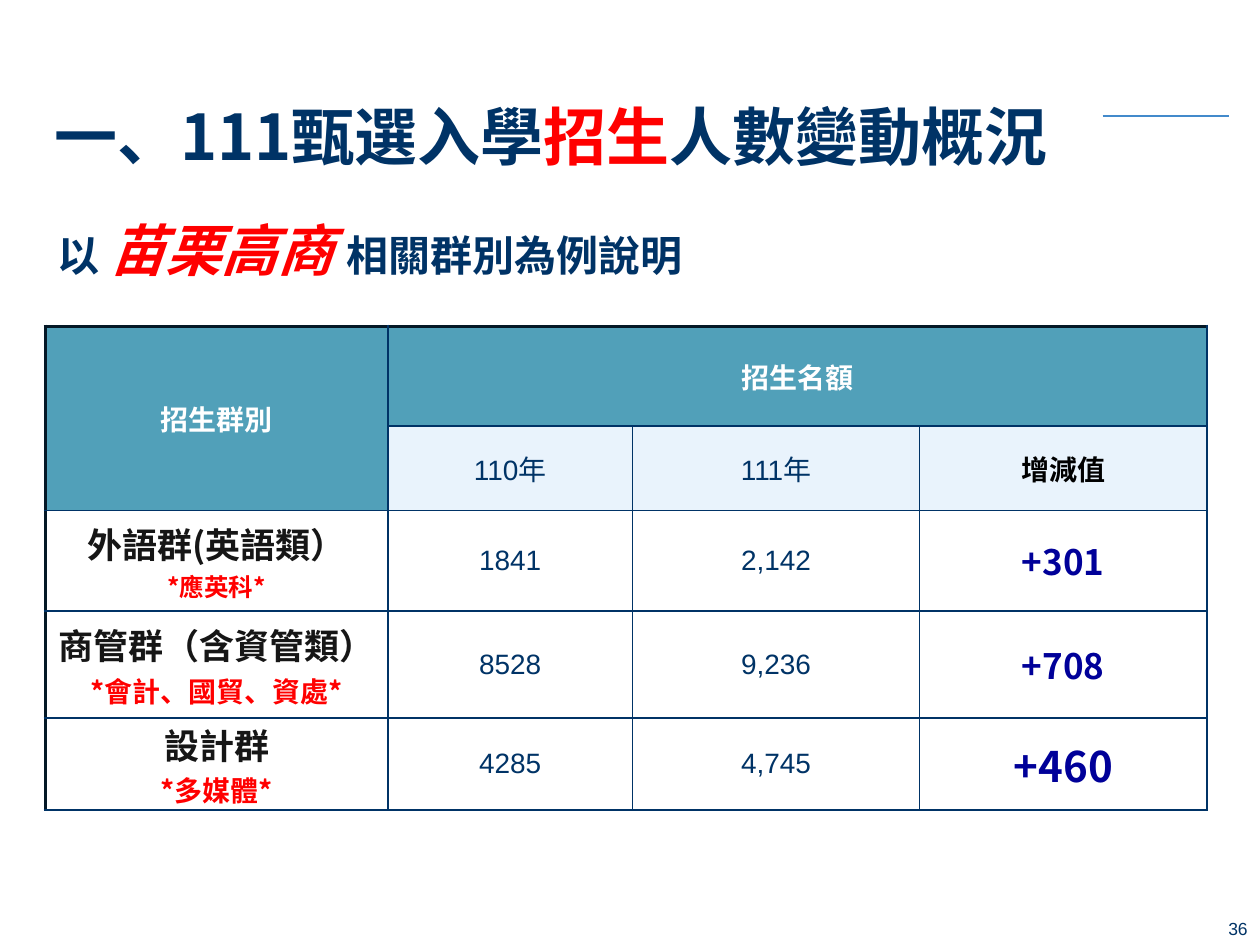
from lxml.etree import SubElement
from pptx import Presentation
from pptx.dml.color import RGBColor
from pptx.enum.shapes import MSO_CONNECTOR
from pptx.enum.text import MSO_ANCHOR, MSO_AUTO_SIZE, PP_ALIGN
from pptx.oxml.ns import qn
from pptx.util import Inches, Pt

SLIDE_WIDTH, SLIDE_HEIGHT = Inches(10), Inches(7.5)
GRID_COLUMNS, GRID_ROWS = 1000, 750
LATIN, CJK = "Arial", "Noto Sans CJK TC"
COLORS = {
    "navy": "003366",
    "red": "FF0000",
    "white": "FFFFFF",
    "black": "000000",
    "ink": "161616",
    "gain": "000099",
    "header": "51A0B9",
    "subheader": "E9F3FC",
    "edge": "041826",
    "rule": "438ACB",
}
COLUMN_SPANS = [272, 194, 228, 228]
ROW_SPANS = [79, 67, 80, 85, 73]
GROUPS = [
    ("外語群(英語類）", "*應英科*", 14, "1841", "2,142", "+301", 20),
    ("商管群（含資管類）", "*會計、國貿、資處*", 16, "8528", "9,236", "+708", 20),
    ("設計群", "*多媒體*", 16, "4285", "4,745", "+460", 24),
]


def across(columns):
    return SLIDE_WIDTH * columns // GRID_COLUMNS


def down(rows):
    return SLIDE_HEIGHT * rows // GRID_ROWS


def area(left, top, width, height):
    return across(left), down(top), across(width), down(height)


def style(font, size, color, face=CJK, bold=True):
    font.size = Pt(size)
    font.bold = bold
    font.color.rgb = RGBColor.from_string(COLORS[color])
    font.name = face
    SubElement(font._rPr, qn("a:ea"), typeface=CJK)


def write_heading(frame, pieces):
    frame.word_wrap = True
    frame.auto_size = MSO_AUTO_SIZE.NONE
    heading = frame.paragraphs[0]
    heading.alignment = PP_ALIGN.LEFT
    properties = heading._p.get_or_add_pPr()
    properties.set("marL", str(across(128)))
    properties.set("indent", str(-across(128)))
    for words, size, color, italic in pieces:
        run = heading.add_run()
        run.text = words
        style(run.font, size, color)
        run.font.italic = italic


def add_title(slide):
    title = slide.shapes.title
    title.left, title.top, title.width, title.height = area(33, 74, 933, 67)
    title.text_frame.vertical_anchor = MSO_ANCHOR.MIDDLE
    write_heading(title.text_frame, [
        ("一、111甄選入學", 36, "navy", False),
        ("招生", 36, "red", False),
        ("人數變動概況", 36, "navy", False),
    ])


def add_subtitle(slide):
    frame = slide.shapes.add_textbox(*area(36, 171, 817, 52)).text_frame
    frame.margin_top = 0
    write_heading(frame, [
        ("以 ", 24, "navy", False),
        ("苗栗高商 ", 32, "red", True),
        ("相關群別為例說明", 24, "navy", False),
    ])


def add_rule(slide):
    rule = slide.shapes.add_connector(
        MSO_CONNECTOR.STRAIGHT, across(875), down(92), across(975), down(92))
    rule.line.color.rgb = RGBColor.from_string(COLORS["rule"])
    rule.line.width = Pt(0.75)
    SubElement(rule._element.spPr, qn("a:effectLst"))


def add_page_number(slide):
    frame = slide.shapes.add_textbox(*area(758, 715, 242, 35)).text_frame
    frame.word_wrap = True
    frame.vertical_anchor = MSO_ANCHOR.BOTTOM
    number = frame.paragraphs[0]
    number.text = "36"
    number.alignment = PP_ALIGN.RIGHT
    style(number.font, 10, "navy", LATIN, False)


def draw_borders(cell, row, column):
    properties = cell._tc.get_or_add_tcPr()
    outer = {"L": column == 0, "T": row == 0}
    for side in "LRTB":
        color, width = ("edge", 2.25) if outer.get(side) else ("navy", 1)
        border = SubElement(properties, qn(f"a:ln{side}"), w=str(Pt(width)))
        fill = SubElement(border, qn("a:solidFill"))
        SubElement(fill, qn("a:srgbClr"), val=COLORS[color])


def format_cell(cell, row, column):
    cell.margin_left = cell.margin_right = cell.margin_top = cell.margin_bottom = 0
    cell.vertical_anchor = MSO_ANCHOR.MIDDLE
    draw_borders(cell, row, column)
    if row > 1:
        cell.fill.background()
        return
    cell.fill.solid()
    shade = "header" if row == 0 or column == 0 else "subheader"
    cell.fill.fore_color.rgb = RGBColor.from_string(COLORS[shade])


def write_cell(cell, *lines):
    frame = cell.text_frame
    for index, (words, *look) in enumerate(lines):
        line = frame.add_paragraph() if index else frame.paragraphs[0]
        line.text = words
        line.alignment = PP_ALIGN.CENTER
        style(line.font, *look)


def add_quota_table(slide):
    table = slide.shapes.add_table(
        len(ROW_SPANS), len(COLUMN_SPANS),
        *area(36, 259, sum(COLUMN_SPANS), sum(ROW_SPANS))).table
    for column, span in zip(table.columns, COLUMN_SPANS):
        column.width = across(span)
    for row, span in zip(table.rows, ROW_SPANS):
        row.height = down(span)
    for row in range(len(ROW_SPANS)):
        for column in range(len(COLUMN_SPANS)):
            format_cell(table.cell(row, column), row, column)
    table.cell(0, 0).merge(table.cell(1, 0))
    table.cell(0, 1).merge(table.cell(0, 3))

    plain = (16, "navy", LATIN, False)
    write_cell(table.cell(0, 0), ("招生群別", 16, "white"))
    write_cell(table.cell(0, 1), ("招生名額", 16, "white"))
    write_cell(table.cell(1, 1), ("110年", *plain))
    write_cell(table.cell(1, 2), ("111年", *plain))
    write_cell(table.cell(1, 3), ("增減值", 16, "black"))
    for row, group in enumerate(GROUPS, start=2):
        name, departments, note_size, before, after, change, change_size = group
        write_cell(table.cell(row, 0),
                   (name, 20, "ink"), (departments, note_size, "red"))
        write_cell(table.cell(row, 1), (before, *plain))
        write_cell(table.cell(row, 2), (after, *plain))
        write_cell(table.cell(row, 3), (change, change_size, "gain"))


def main():
    deck = Presentation()
    deck.slide_width, deck.slide_height = SLIDE_WIDTH, SLIDE_HEIGHT
    slide = deck.slides.add_slide(deck.slide_layouts.get_by_name("Title Only"))
    add_rule(slide)
    add_page_number(slide)
    add_title(slide)
    add_subtitle(slide)
    add_quota_table(slide)
    deck.save("out.pptx")


if __name__ == "__main__":
    main()
